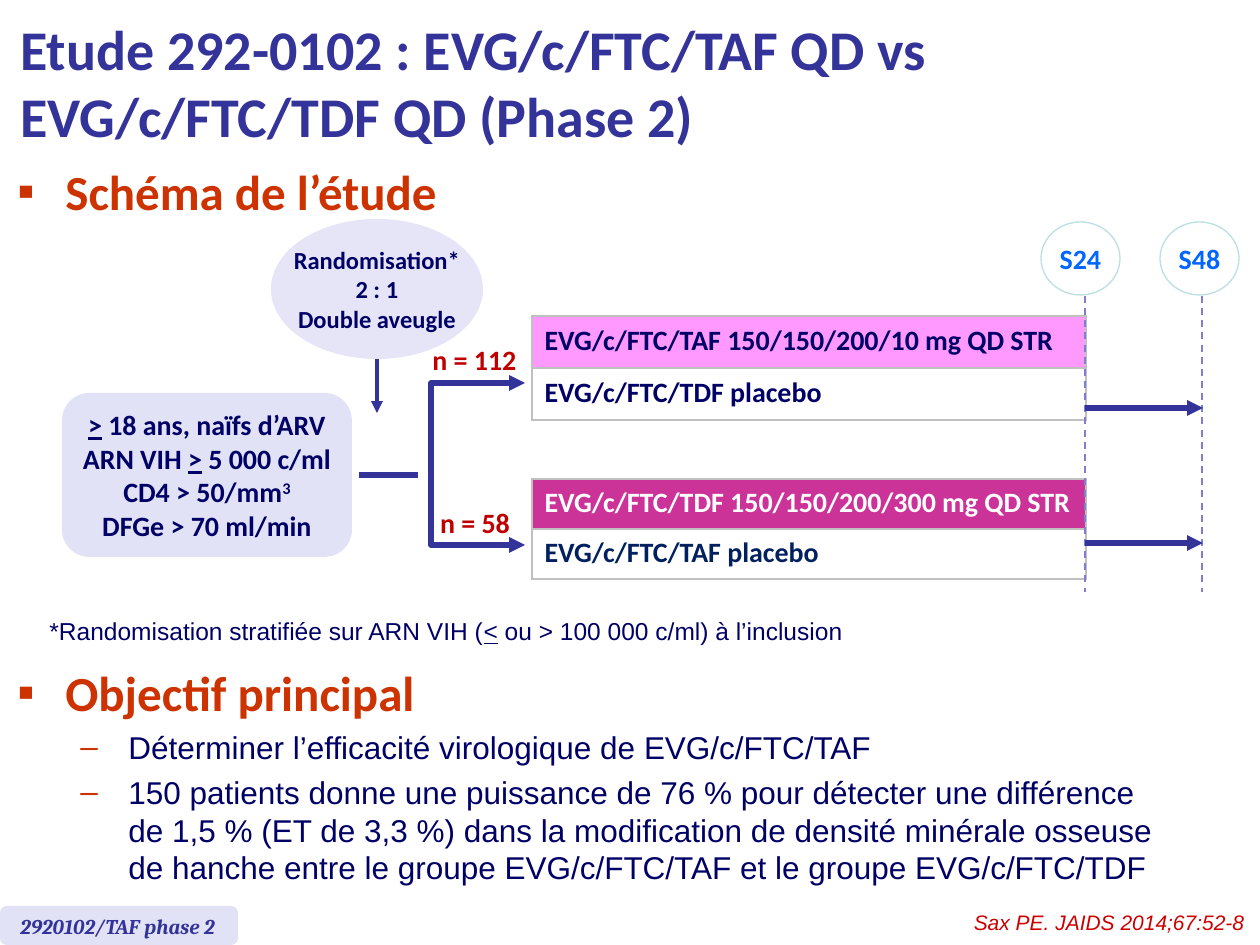
from lxml.etree import SubElement
from pptx import Presentation
from pptx.dml.color import RGBColor
from pptx.enum.dml import MSO_LINE_DASH_STYLE as Dash
from pptx.enum.shapes import MSO_CONNECTOR_TYPE as Link, MSO_SHAPE as Shape
from pptx.enum.text import MSO_ANCHOR as Anchor, PP_ALIGN as Align
from pptx.oxml.ns import qn
from pptx.util import Pt

PX = 914400 / 126
NAVY = RGBColor(0x00, 0x00, 0x66)
INDIGO = RGBColor(0x33, 0x33, 0x99)
DASHED = RGBColor(0x7E, 0x7E, 0xD4)
LAVENDER = RGBColor(0xE2, 0xE2, 0xF6)
PALE = RGBColor(0xE5, 0xE5, 0xF7)
RUST = RGBColor(0xCC, 0x33, 0x00)
CRIMSON = RGBColor(0xC0, 0x00, 0x00)
RED = RGBColor(0xCC, 0x00, 0x00)
BLUE = RGBColor(0x00, 0x66, 0xFF)
AQUA = RGBColor(0xBB, 0xE0, 0xE3)
PINK = RGBColor(0xFF, 0x99, 0xFF)
MAGENTA = RGBColor(0xCC, 0x33, 0x99)
DEEP = RGBColor(0x00, 0x20, 0x60)
WHITE = RGBColor(0xFF, 0xFF, 0xFF)
SILVER = RGBColor(0xC0, 0xC0, 0xC0)

deck = Presentation()
deck.slide_width, deck.slide_height = round(1260 * PX), round(945 * PX)
page = deck.slides.add_slide(deck.slide_layouts[6])


def place(*lengths):
    return [round(length * PX) for length in lengths]


def write(para, spans, color, size, name="Calibri", **extra):
    for text, style in spans:
        span = para.add_run()
        span.text = text
        if style == "super":
            span._r.get_or_add_rPr().set("baseline", "30000")
        values = {"name": name, "size": Pt(size), "underline": style == "under", **extra}
        for key, value in values.items():
            setattr(span.font, key, value)
        span.font.color.rgb = color


ITALIC = {"italic": True}
BOLD = {"bold": True}
LABELS = [
    ((8, 6, 1203, 152), "Etude 292-0102 : EVG/c/FTC/TAF QD vs EVG/c/FTC/TDF QD (Phase 2)",
     INDIGO, 32, "Calibri", BOLD, Align.LEFT, True),
    ((879, 903, 378, 38), "Sax PE. JAIDS 2014;67:52-8", RED, 12, "Arial", ITALIC, Align.RIGHT, True),
    ((418, 336, 113, 47), "n = 112", CRIMSON, 16, "Calibri", BOLD, Align.CENTER, False),
    ((427, 499, 96, 47), "n = 58", CRIMSON, 16, "Calibri", BOLD, Align.CENTER, False),
]
for area, text, color, size, name, extra, align, wrap in LABELS:
    box = page.shapes.add_textbox(*place(*area))
    frame = box.text_frame
    frame.word_wrap = wrap
    frame.vertical_anchor = Anchor.MIDDLE if size == 32 else Anchor.TOP
    frame.paragraphs[0].alignment = align
    write(frame.paragraphs[0], [(text, "")], color, size, name, **extra)

note = page.shapes.add_textbox(*place(37, 610, 1021, 43)).text_frame
note.word_wrap = True
note_spans = [("*Randomisation stratifiée sur ARN VIH (", ""), ("<", "under"),
              (" ou > 100 000 c/ml) à l’inclusion", "")]
write(note.paragraphs[0], note_spans, NAVY, 14, "Arial")

HEADING = {"bullet": "▪", "margin": 48, "color": RUST, "size": 28, "name": "Calibri", "bold": True}
DETAIL = {"bullet": "–", "margin": 111, "color": NAVY, "size": 18, "name": "Arial", "bold": False}
LISTS = [
    ((5, 155, 478, 79), [(HEADING, ["Schéma de l’étude"])]),
    ((5, 656, 1235, 247), [
        (HEADING, ["Objectif principal"]),
        (DETAIL, ["Déterminer l’efficacité virologique de EVG/c/FTC/TAF"]),
        (DETAIL, ["150 patients donne une puissance de 76 % pour détecter une différence",
                  "de 1,5 % (ET de 3,3 %) dans la modification de densité minérale osseuse",
                  "de hanche entre le groupe EVG/c/FTC/TAF et le groupe EVG/c/FTC/TDF"]),
    ]),
]
for area, entries in LISTS:
    frame = page.shapes.add_textbox(*place(*area)).text_frame
    frame.word_wrap = True
    for index, (level, lines) in enumerate(entries):
        para = frame.add_paragraph() if index else frame.paragraphs[0]
        props = para._p.get_or_add_pPr()
        margin, indent = place(level["margin"], -48)
        props.set("marL", str(margin))
        props.set("indent", str(indent))
        SubElement(SubElement(props, qn("a:buClr")), qn("a:srgbClr")).set("val", str(RUST))
        SubElement(props, qn("a:buFont")).set("typeface", "Arial")
        SubElement(props, qn("a:buChar")).set("char", level["bullet"])
        if index:
            para.space_before = Pt(4)
        for number, line in enumerate(lines):
            if number:
                para.add_line_break()
            write(para, [(line, "")], level["color"], level["size"], level["name"], bold=level["bold"])

ARMS = [
    (316, 52, "EVG/c/FTC/TAF 150/150/200/10 mg QD STR", NAVY, PINK, "EVG/c/FTC/TDF placebo", NAVY),
    (479, 50, "EVG/c/FTC/TDF 150/150/200/300 mg QD STR", WHITE, MAGENTA, "EVG/c/FTC/TAF placebo", DEEP),
]
for top, height, active, active_color, active_fill, placebo, placebo_color in ARMS:
    table = page.shapes.add_table(2, 1, *place(532, top, 554, 2 * height)).table
    table.first_row = table.horz_banding = False
    rows = [(active, active_color, active_fill), (placebo, placebo_color, WHITE)]
    for index, (text, color, fill) in enumerate(rows):
        cell = table.cell(index, 0)
        cell.vertical_anchor = Anchor.MIDDLE
        props = cell._tc.get_or_add_tcPr()
        for side in ("a:lnL", "a:lnR", "a:lnT", "a:lnB"):
            border = SubElement(props, qn(side), w=str(Pt(1)))
            paint = SubElement(border, qn("a:solidFill"))
            SubElement(paint, qn("a:srgbClr")).set("val", str(SILVER))
        cell.fill.solid()
        cell.fill.fore_color.rgb = fill
        para = cell.text_frame.paragraphs[0]
        para.line_spacing = 0.8
        write(para, [(text, "")], color, 16, bold=True)

CRITERIA = [
    [(">", "under"), (" 18 ans, naïfs d’ARV", "")],
    [("ARN VIH ", ""), (">", "under"), (" 5 000 c/ml", "")],
    [("CD4 > 50/mm", ""), ("3", "super")],
    [("DFGe > 70 ml/min", "")],
]
RANDOMISATION = [[(line, "")] for line in ("Randomisation*", "2 : 1", "Double aveugle")]
SHAPES = [
    (Shape.ROUNDED_RECTANGLE, (0, 906, 238, 39), LAVENDER, None, [], NAVY, 12),
    (Shape.OVAL, (271, 219, 212, 140), PALE, None, RANDOMISATION, NAVY, 14),
    (Shape.ROUNDED_RECTANGLE, (62, 393, 290, 164), LAVENDER, None, CRITERIA, NAVY, 16),
    (Shape.OVAL, (1041, 222, 79, 73), WHITE, AQUA, [[("S24", "")]], BLUE, 16),
    (Shape.OVAL, (1160, 222, 79, 73), WHITE, AQUA, [[("S48", "")]], BLUE, 16),
]
for kind, area, fill, outline, lines, color, size in SHAPES:
    shape = page.shapes.add_shape(kind, *place(*area))
    shape.shadow.inherit = False
    shape.fill.solid()
    shape.fill.fore_color.rgb = fill
    if outline:
        shape.line.color.rgb = outline
        shape.line.width = Pt(0.75)
    else:
        shape.line.fill.background()
    frame = shape.text_frame
    frame.word_wrap = False
    frame.vertical_anchor = Anchor.MIDDLE
    for index, spans in enumerate(lines):
        para = frame.add_paragraph() if index else frame.paragraphs[0]
        para.alignment = Align.CENTER
        write(para, spans, color, size, bold=True)

tag = page.shapes.add_textbox(*place(8, 907, 246, 38)).text_frame
tag.word_wrap = True
write(tag.paragraphs[0], [("2920102/TAF phase 2", "")], INDIGO, 12, "Cambria", bold=True, italic=True)

LINES = [
    ((377, 359, 377, 413), INDIGO, 2.25, None, True),
    ((359, 475, 418, 475), INDIGO, 3, None, False),
    ((1202, 296, 1202, 592), DASHED, 1, Dash.DASH, False),
    ((1085, 296, 1085, 592), DASHED, 1, Dash.DASH, False),
    ((1085, 408, 1203, 408), INDIGO, 3, None, True),
    ((1085, 543, 1203, 543), INDIGO, 3, None, True),
]
for ends, color, width, dash, arrow in LINES:
    line = page.shapes.add_connector(Link.STRAIGHT, *place(*ends))
    line.line.color.rgb = color
    line.line.width = Pt(width)
    if dash:
        line.line.dash_style = dash
    if arrow:
        SubElement(line.line._get_or_add_ln(), qn("a:tailEnd"), type="triangle")
    SubElement(line._element.spPr, qn("a:effectLst"))

builder = page.shapes.build_freeform(525, 383, scale=PX)
builder.add_line_segments([(431, 383), (431, 545), (525, 545)], close=False)
fork = builder.convert_to_shape()
fork.shadow.inherit = False
fork.fill.background()
fork.line.color.rgb = INDIGO
fork.line.width = Pt(3)
for end in ("a:headEnd", "a:tailEnd"):
    SubElement(fork.line._get_or_add_ln(), qn(end), type="triangle")

deck.save("out.pptx")
